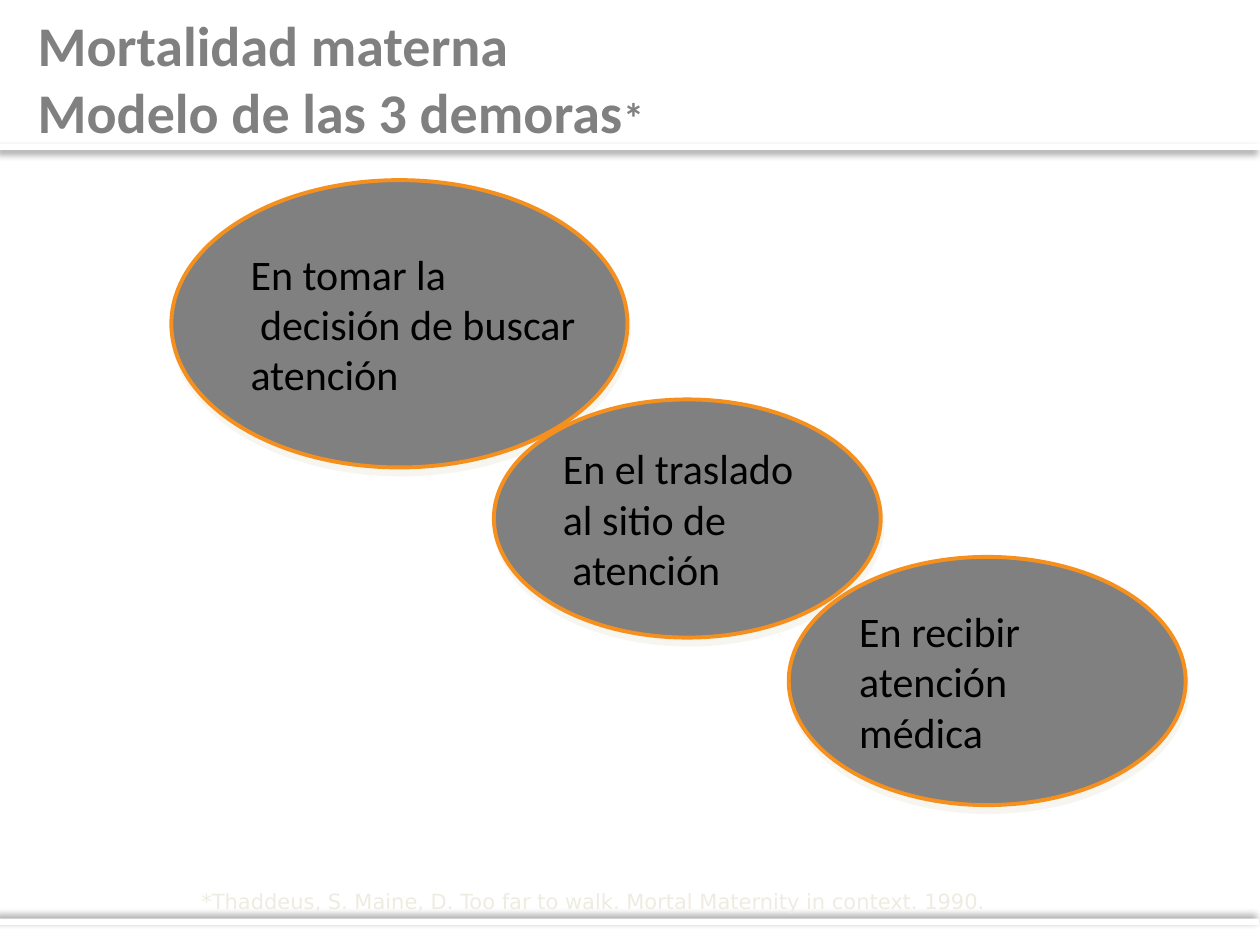
import pptx
import pptx.dml.color
import pptx.enum.shapes
import pptx.enum.text
import pptx.oxml
import pptx.oxml.ns
import pptx.util
from pptx.util import Inches

GRAY, ORANGE, IVORY = "808080", "F5901E", "EEECE1"
SHAPES = pptx.enum.shapes.MSO_SHAPE
MIDDLE = pptx.enum.text.MSO_ANCHOR.MIDDLE


def rgb(value):
    return pptx.dml.color.RGBColor.from_string(value)


class SlideBuilder:
    """Hold the shared style and the current slide."""

    def __init__(self, slide, font="Calibri"):
        self.slide = slide
        self.font = font

    def run(self, p, text, size, color, bold=False, font=None):
        r = p.add_run()
        r.text = text
        r.font.name = font or self.font
        r.font.size = pptx.util.Pt(size)
        r.font.bold = bold
        r.font.color.rgb = rgb(color)

    def shadow(self, sp, color, alpha, blur, dist, angle):
        sp.shadow.inherit = False
        effects = sp._element.spPr.find(pptx.oxml.ns.qn("a:effectLst"))
        effects.append(pptx.oxml.parse_xml(
            f'<a:outerShdw {pptx.oxml.ns.nsdecls("a")} blurRad="{pptx.util.Pt(blur)}" '
            f'dist="{pptx.util.Pt(dist)}" dir="{angle * 60000}" algn="t" rotWithShape="0">'
            f'<a:srgbClr val="{color}"><a:alpha val="{alpha * 1000}"/></a:srgbClr>'
            f'</a:outerShdw>'))

    def shape(self, kind, box, fill):
        sp = self.slide.shapes.add_shape(kind, *map(Inches, box))
        sp.fill.solid()
        sp.fill.fore_color.rgb = rgb(fill)
        return sp

    def bar(self, left, top, rotation, angle):
        sp = self.shape(SHAPES.RECTANGLE, (left, top, 10, 0.05), "FFFFFF")
        sp.line.fill.background()
        sp.rotation = rotation
        self.shadow(sp, "000000", 40, 4, 3, angle)

    def ellipse(self, box, lines):
        sp = self.shape(SHAPES.OVAL, box, GRAY)
        sp.line.color.rgb = rgb(ORANGE)
        sp.line.width = pptx.util.Pt(2.25)
        self.shadow(sp, IVORY, 50, 0, 4.1, 76)
        tf = sp.text_frame
        tf.word_wrap = False
        tf.vertical_anchor = MIDDLE
        for i, line in enumerate(lines):
            p = tf.add_paragraph() if i else tf.paragraphs[0]
            p.alignment = pptx.enum.text.PP_ALIGN.LEFT
            self.run(p, line, 24, "000000")

    def textbox(self, box, wrap):
        tf = self.slide.shapes.add_textbox(*map(Inches, box)).text_frame
        tf.word_wrap = wrap
        return tf

    def title(self, box, lines, mark):
        tf = self.textbox(box, True)
        tf.vertical_anchor = MIDDLE
        p = tf.paragraphs[0]
        for i, line in enumerate(lines):
            if i:
                p.add_line_break()
            self.run(p, line, 32, GRAY, bold=True)
        self.run(p, mark, 24, GRAY, bold=True)

    def citation(self, box, text):
        tf = self.textbox(box, False)
        tf.auto_size = pptx.enum.text.MSO_AUTO_SIZE.SHAPE_TO_FIT_TEXT
        self.run(tf.paragraphs[0], text, 12, IVORY, font="DejaVu Sans")


def main():
    prs = pptx.Presentation()
    prs.slide_width, prs.slide_height = Inches(10), Inches(7.5)
    s = SlideBuilder(prs.slides.add_slide(prs.slide_layouts[6]))

    s.bar(0, 1.14, 0, 135)
    s.bar(-0.01, 7.29, 180, 225)
    s.citation((1.5, 7, 7.28, 0.3),
               "*Thaddeus, S. Maine, D. Too far to walk. Mortal Maternity in context. 1990.")

    delays = [
        ((1.36, 1.43, 3.62, 2.28), ["En tomar la", " decisión de buscar", "atención"]),
        ((3.92, 3.17, 3.07, 1.89), ["En el traslado", "al sitio de", " atención"]),
        ((6.26, 4.42, 3.15, 1.97), ["En recibir", "atención", "médica"]),
    ]
    for box, lines in delays:
        s.ellipse(box, lines)

    s.title((0.2, 0, 7.09, 1.23), ["Mortalidad materna", "Modelo de las 3 demoras"], "*")
    prs.save("out.pptx")


if __name__ == "__main__":
    main()
